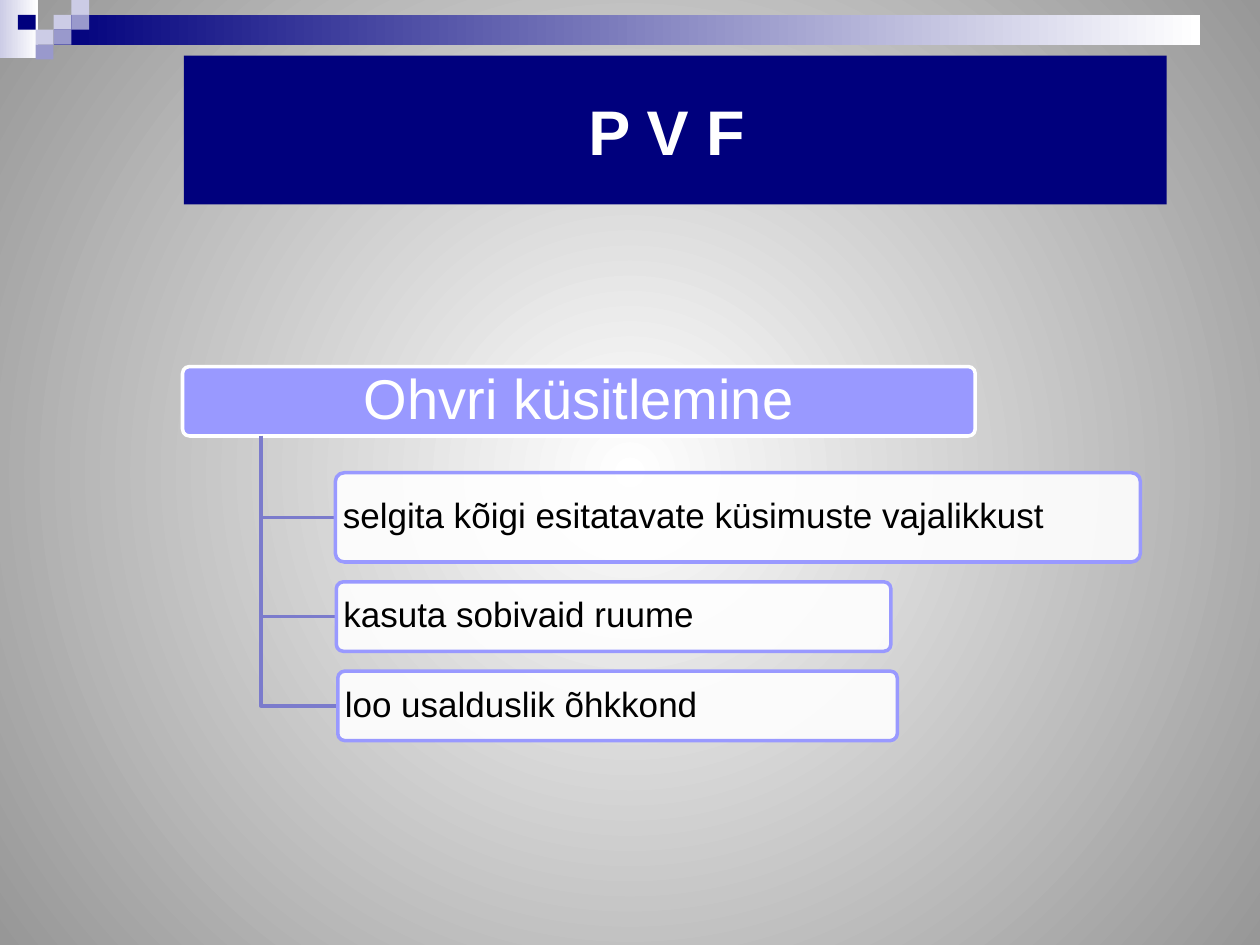
from dataclasses import dataclass

from lxml import etree
from pptx import Presentation
from pptx.dml.color import RGBColor
from pptx.enum.shapes import MSO_SHAPE
from pptx.enum.text import MSO_ANCHOR, PP_ALIGN
from pptx.oxml.ns import qn
from pptx.util import Cm, Pt


@dataclass(frozen=True)
class Theme:
    font: str = "Arial"
    navy: str = "00007D"
    violet: str = "9999FF"
    branch: str = "7B7BCC"
    mid: str = "9999CC"
    pale: str = "CCCCE6"
    white: str = "FFFFFF"
    black: str = "000000"
    gray: str = "979797"
    title_size: int = 36
    header_size: int = 32
    item_size: int = 20
    line_width: int = 2


THEME = Theme()

TITLE = "P V F "
HEADER = "Ohvri küsitlemine"
# text, left, width, height in cm
ITEMS = [
    ("selgita kõigi esitatavate küsimuste vajalikkust", 6.76, 16.23, 1.8),
    ("kasuta sobivaid ruume", 6.78, 11.18, 1.4),
    ("loo usalduslik õhkkond", 6.81, 11.28, 1.4),
]

TITLE_AREA = (3.71, 1.12, 19.81, 3.0)
HEADER_AREA = (3.68, 7.39, 15.98, 1.4)
TRUNK_LEFT = 5.26
FIRST_GAP, ITEM_GAP = 0.74, 0.4

# Corner mosaic: column, row, colour
CELL_WIDTH, CELL_HEIGHT = 0.36, 0.3
MOSAIC = [
    (3, 1, THEME.pale),
    (4, 0, THEME.pale),
    (4, 1, THEME.mid),
    (2, 2, THEME.pale),
    (1, 1, THEME.navy),
    (3, 2, THEME.mid),
    (2, 3, THEME.mid),
]


def color(value):
    return RGBColor.from_string(value)


def set_gradient(fill, start, end):
    fill.gradient()
    for stop, value in zip(fill.gradient_stops, (start, end)):
        stop.color.rgb = color(value)


def set_background(page):
    """Fill the page with a gradient that spreads from its centre."""
    fill = page.background.fill
    set_gradient(fill, THEME.white, THEME.gray)
    gradient = page.background._cSld.find(".//" + qn("a:gradFill"))
    linear = gradient.find(qn("a:lin"))
    circle = etree.Element(qn("a:path"), path="circle")
    etree.SubElement(circle, qn("a:fillToRect"),
                     dict.fromkeys("ltrb", "50000"))
    gradient.replace(linear, circle)


def set_opacity(shape, percent):
    value = shape.fill._xPr.find(qn("a:solidFill"))[0]
    etree.SubElement(value, qn("a:alpha"), val=str(percent * 1000))


def add_box(page, area, fill, end=None, line=None, rounded=False):
    """Add a box; with an end colour the fill runs from left to right."""
    kind = MSO_SHAPE.ROUNDED_RECTANGLE if rounded else MSO_SHAPE.RECTANGLE
    box = page.shapes.add_shape(kind, *map(Cm, area))
    box.shadow.inherit = False
    if rounded:
        box.adjustments[0] = 0.1
    if end:
        set_gradient(box.fill, fill, end)
        box.fill.gradient_angle = 0
    else:
        box.fill.solid()
        box.fill.fore_color.rgb = color(fill)
    if line:
        box.line.color.rgb = color(line)
        box.line.width = Pt(THEME.line_width)
    else:
        box.line.fill.background()
    return box


def write(box, text, *, size, ink, align=PP_ALIGN.LEFT, bold=False,
          spacing=None, inset=(0.25, 0.13)):
    frame = box.text_frame
    frame.word_wrap = True
    frame.vertical_anchor = MSO_ANCHOR.MIDDLE
    frame.margin_left = frame.margin_right = Cm(inset[0])
    frame.margin_top = frame.margin_bottom = Cm(inset[1])
    para = frame.paragraphs[0]
    para.alignment = align
    para.line_spacing = spacing
    span = para.add_run()
    span.text = text
    span.font.name = THEME.font
    span.font.size = Pt(size)
    span.font.bold = bold
    span.font.color.rgb = color(ink)


def add_branch(page, top, middle, right):
    """Draw an elbow from the header down and across to an item."""
    builder = page.shapes.build_freeform(Cm(TRUNK_LEFT), Cm(top))
    builder.add_line_segments(
        [(Cm(TRUNK_LEFT), Cm(middle)), (Cm(right), Cm(middle))], close=False)
    branch = builder.convert_to_shape()
    branch.shadow.inherit = False
    branch.fill.background()
    branch.line.color.rgb = color(THEME.branch)
    branch.line.width = Pt(THEME.line_width)


def add_decoration(page):
    add_box(page, (0, 0, 0.76, 1.17), THEME.pale, end=THEME.white)
    add_box(page, (3 * CELL_WIDTH, CELL_HEIGHT, 23.11, 2 * CELL_HEIGHT),
            THEME.navy, end=THEME.white)
    for column, row, fill in MOSAIC:
        add_box(page, (column * CELL_WIDTH, row * CELL_HEIGHT,
                       CELL_WIDTH, CELL_HEIGHT), fill)


def add_hierarchy(page):
    header = add_box(page, HEADER_AREA, THEME.violet, line=THEME.white,
                     rounded=True)
    write(header, HEADER, size=THEME.header_size, ink=THEME.white,
          align=PP_ALIGN.CENTER, spacing=0.9, inset=(0.18, 0.1))
    trunk_top = HEADER_AREA[1] + HEADER_AREA[3]
    top = trunk_top + FIRST_GAP
    for text, left, width, height in ITEMS:
        add_branch(page, trunk_top, top + height / 2, left)
        item = add_box(page, (left, top, width, height), THEME.white,
                       line=THEME.violet, rounded=True)
        set_opacity(item, 90)
        write(item, text, size=THEME.item_size, ink=THEME.black,
              spacing=0.9, inset=(0.1, 0.08))
        top += height + ITEM_GAP


def main():
    deck = Presentation()
    deck.slide_width, deck.slide_height = Cm(25.4), Cm(19.05)
    page = deck.slides.add_slide(deck.slide_layouts[6])
    set_background(page)
    add_decoration(page)
    title = add_box(page, TITLE_AREA, THEME.navy)
    write(title, TITLE, size=THEME.title_size, ink=THEME.white,
          align=PP_ALIGN.CENTER, bold=True)
    add_hierarchy(page)
    deck.save("out.pptx")


if __name__ == "__main__":
    main()
